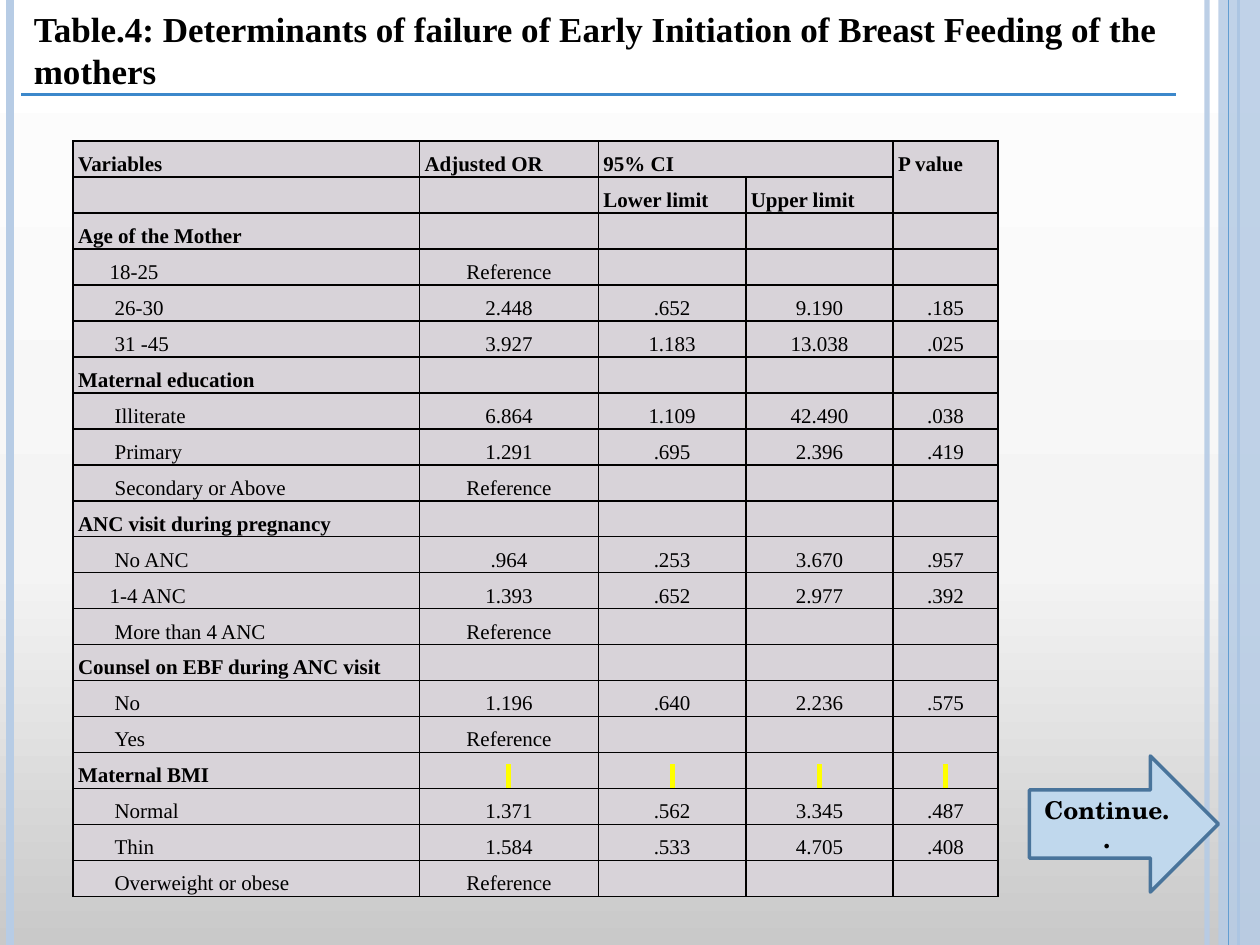
from lxml import etree
from pptx import Presentation
from pptx.dml.color import RGBColor
from pptx.enum.shapes import MSO_CONNECTOR, MSO_SHAPE
from pptx.enum.text import MSO_ANCHOR, PP_ALIGN
from pptx.oxml import parse_xml
from pptx.oxml.ns import nsdecls, qn
from pptx.util import Inches, Pt

STRAIGHT = MSO_CONNECTOR.STRAIGHT
RECTANGLE, RIGHT_ARROW = MSO_SHAPE.RECTANGLE, MSO_SHAPE.RIGHT_ARROW
MIDDLE = MSO_ANCHOR.MIDDLE
LEFT, CENTER = PP_ALIGN.LEFT, PP_ALIGN.CENTER
SERIF, SCHOOL = "Times New Roman", "TeX Gyre Schola"
BLACK, CELL_FILL, PALE_BLUE, MID_BLUE = "000000", "D8D3D9", "B7CCE5", "629DD1"

TITLE = ("Table.4: Determinants of failure of Early Initiation of "
         "Breast Feeding of the mothers")
HEADER = [("Variables", "Adjusted OR", "95% CI", "", "P value"),
          ("", "", "Lower limit", "Upper limit", "")]
REFERENCE = ("Reference",)
GROUPS = {
    "Age of the Mother": [
        ("18-25", *REFERENCE),
        ("26-30", "2.448", ".652", "9.190", ".185"),
        ("31 -45", "3.927", "1.183", "13.038", ".025")],
    "Maternal education": [
        ("Illiterate", "6.864", "1.109", "42.490", ".038"),
        ("Primary", "1.291", ".695", "2.396", ".419"),
        ("Secondary or Above", *REFERENCE)],
    "ANC visit during pregnancy": [
        ("No ANC", ".964", ".253", "3.670", ".957"),
        ("1-4 ANC", "1.393", ".652", "2.977", ".392"),
        ("More than 4 ANC", *REFERENCE)],
    "Counsel on EBF during ANC visit": [
        ("No", "1.196", ".640", "2.236", ".575"),
        ("Yes", *REFERENCE)],
    "Maternal BMI": [
        ("Normal", "1.371", ".562", "3.345", ".487"),
        ("Thin", "1.584", ".533", "4.705", ".408"),
        ("Overweight or obese", *REFERENCE)],
}
HIGHLIGHTED_GROUP = "Maternal BMI"
SLIGHTLY_INDENTED = ("18-25", "1-4 ANC")
COLUMN_WIDTHS = [2.75, 1.42, 1.17, 1.17, 0.83]
TABLE_LEFT, TABLE_TOP, TABLE_HEIGHT = 0.58, 1.12, 6
CELL_MARGIN = 0.04
BACKGROUND_STOPS = [(0, "C9C9C9"), (40, "F4F4F4"), (100, "FFFFFF")]


def color(code):
    return RGBColor.from_string(code)


def set_alpha(fill_owner, percent):
    for tint in fill_owner.iter(qn("a:srgbClr")):
        etree.SubElement(tint, qn("a:alpha"), val=str(percent * 1000))


def add_line(page, x1, y1, x2, y2, code, width):
    line = page.shapes.add_connector(
        STRAIGHT, Inches(x1), Inches(y1), Inches(x2), Inches(y2))
    line.line.color.rgb = color(code)
    line.line.width = Pt(width)
    etree.SubElement(line.element.spPr, qn("a:effectLst"))
    return line


def add_block(page, kind, left, top, width, height, code):
    block = page.shapes.add_shape(
        kind, Inches(left), Inches(top), Inches(width), Inches(height))
    block.shadow.inherit = False
    block.fill.solid()
    block.fill.fore_color.rgb = color(code)
    block.line.fill.background()
    return block


def write(para, text, size, font, bold=False, align=LEFT):
    para.text = text
    para.alignment = align
    para.font.size = Pt(size)
    para.font.name = font
    para.font.bold = bold
    para.font.color.rgb = color(BLACK)


def add_borders(cell):
    properties = cell._tc.get_or_add_tcPr()
    for position, side in enumerate(("lnL", "lnR", "lnT", "lnB")):
        properties.insert(position, parse_xml(
            f'<a:{side} {nsdecls("a")} w="12700"><a:solidFill>'
            f'<a:srgbClr val="{BLACK}"/></a:solidFill></a:{side}>'))


def highlight_blank(para):
    span = para.add_run()
    span.text = " "
    span.font.size = Pt(12)
    span.font._element.append(parse_xml(
        f'<a:highlight {nsdecls("a")}><a:srgbClr val="FFFF00"/></a:highlight>'))


def fill_cell(cell, text, bold, align, indent):
    cell.margin_left = Inches(CELL_MARGIN + indent)
    cell.margin_right = Inches(CELL_MARGIN)
    cell.margin_top = cell.margin_bottom = 0
    cell.fill.solid()
    cell.fill.fore_color.rgb = color(CELL_FILL)
    add_borders(cell)
    para = cell.text_frame.paragraphs[0]
    write(para, text, 12, SERIF, bold, align)
    para.line_spacing = 1.5


def add_results(page):
    # Each row is paired with whether it is a heading
    rows = [(row, True) for row in HEADER]
    for group, members in GROUPS.items():
        rows.append(((group,), True))
        rows += [(member, False) for member in members]
    count = len(COLUMN_WIDTHS)
    table = page.shapes.add_table(
        len(rows), count, Inches(TABLE_LEFT), Inches(TABLE_TOP),
        Inches(sum(COLUMN_WIDTHS)), Inches(TABLE_HEIGHT)).table
    table.first_row = table.horz_banding = False
    for column, width in zip(table.columns, COLUMN_WIDTHS):
        column.width = Inches(width)
    for r, (row, heading) in enumerate(rows):
        table.rows[r].height = Inches(TABLE_HEIGHT / len(rows))
        for c in range(count):
            cell = table.cell(r, c)
            indent = 0
            if c == 0 and not heading:
                indent = 0.25 if row[0] in SLIGHTLY_INDENTED else 0.29
            align = LEFT if c == 0 or r < len(HEADER) else CENTER
            fill_cell(cell, row[c] if c < len(row) else "", heading, align, indent)
            if row[0] == HIGHLIGHTED_GROUP and c > 0:
                highlight_blank(cell.text_frame.paragraphs[0])
    table.cell(0, 2).merge(table.cell(0, 3))
    table.cell(0, 4).merge(table.cell(1, 4))


def main():
    deck = Presentation()
    deck.slide_width, deck.slide_height = Inches(10), Inches(7.5)
    page = deck.slides.add_slide(deck.slide_layouts[6])

    # Background, light at the top
    stops = "".join(f'<a:gs pos="{place * 1000}"><a:srgbClr val="{code}"/></a:gs>'
                    for place, code in BACKGROUND_STOPS)
    page.element.cSld.insert(0, parse_xml(
        f'<p:bg {nsdecls("p", "a")}><p:bgPr><a:gradFill><a:gsLst>{stops}</a:gsLst>'
        '<a:lin ang="16200000" scaled="0"/></a:gradFill><a:effectLst/>'
        '</p:bgPr></p:bg>'))

    # Vertical stripes at both edges
    inner_stripe = add_line(page, 9.58, 0, 9.58, 7.5, PALE_BLUE, 3)
    set_alpha(inner_stripe.element, 93)
    add_line(page, 0.08, 0, 0.08, 7.5, PALE_BLUE, 4.5)
    add_line(page, 9.83, 0, 9.83, 7.5, MID_BLUE, 1.5)
    band = add_block(page, RECTANGLE, 9.67, 0, 0.33, 7.5, PALE_BLUE)
    set_alpha(band.element, 87)
    add_line(page, 9.75, 0, 9.75, 7.5, MID_BLUE, 0.75)

    add_results(page)

    # Continuation arrow
    arrow = add_block(page, RIGHT_ARROW, 8.17, 6, 1.5, 1.08, "C0D8ED")
    arrow.line.color.rgb = color("49749B")
    arrow.line.width = Pt(2)
    arrow.text_frame.vertical_anchor = MIDDLE
    write(arrow.text_frame.paragraphs[0], "Continue..", 14, SCHOOL, True, CENTER)

    # Title and its rule
    box = page.shapes.add_textbox(
        Inches(0.17), Inches(0.17), Inches(9.83), Inches(0.45))
    box.text_frame.word_wrap = True
    box.text_frame.vertical_anchor = MIDDLE
    write(box.text_frame.paragraphs[0], TITLE, 20, SERIF, True)
    add_line(page, 0.17, 0.75, 9.33, 0.75, "3C88CB", 1.5)

    deck.save("out.pptx")


if __name__ == "__main__":
    main()
